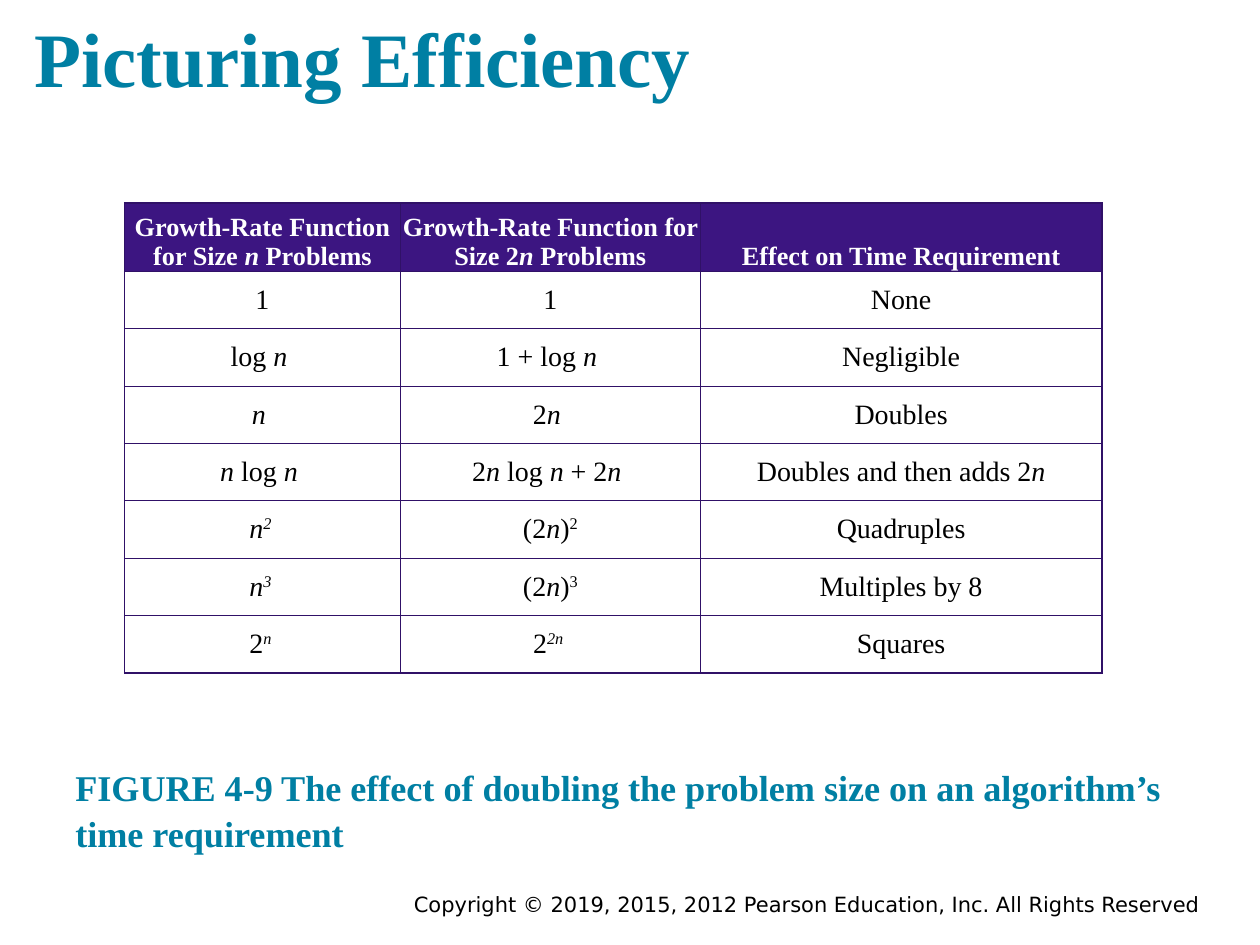
import pptx
import pptx.dml.color
import pptx.enum.text
import pptx.oxml.ns
import pptx.util
from lxml import etree

Pt = pptx.util.Pt
ALIGN = pptx.enum.text.PP_ALIGN
ANCHOR = pptx.enum.text.MSO_ANCHOR

SERIF = "Times New Roman"
TEAL, PURPLE, BORDER = "007FA3", "3C1581", "301167"
BLACK, WHITE = "000000", "FFFFFF"

TITLE = "Picturing Efficiency"
CAPTION = ("FIGURE 4-9 The effect of doubling the problem size on an "
           "algorithm’s time requirement")
COPYRIGHT = "Copyright © 2019, 2015, 2012 Pearson Education, Inc. All Rights Reserved"

PLAIN, ITALIC, SUPER, ITALIC_SUPER = "", "i", "s", "is"
N = ("n ", ITALIC)
N_TIGHT = ("n", ITALIC)
HEADER = [
    [("Growth-Rate Function for Size ", PLAIN), N, ("Problems", PLAIN)],
    [("Growth-Rate Function for Size 2", PLAIN), N, ("Problems", PLAIN)],
    [("Effect on Time Requirement", PLAIN)],
]
BODY = [
    [[("1", PLAIN)], [("1", PLAIN)], [("None", PLAIN)]],
    [[("log ", PLAIN), N], [("1 + log ", PLAIN), N], [("Negligible", PLAIN)]],
    [[N], [("2", PLAIN), N], [("Doubles", PLAIN)]],
    [[N_TIGHT, (" log ", PLAIN), N],
     [("2", PLAIN), N_TIGHT, (" log ", PLAIN), N_TIGHT, (" + 2", PLAIN), N],
     [("Doubles and then adds 2", PLAIN), N_TIGHT]],
    [[N_TIGHT, ("2 ", ITALIC_SUPER)],
     [("(2", PLAIN), N_TIGHT, (")", PLAIN), ("2", SUPER)],
     [("Quadruples", PLAIN)]],
    [[N_TIGHT, ("3 ", ITALIC_SUPER)],
     [("(2", PLAIN), N_TIGHT, (")", PLAIN), ("3", SUPER)],
     [("Multiples by 8", PLAIN)]],
    [[("2", PLAIN), ("n ", ITALIC_SUPER)],
     [("2", PLAIN), ("2n ", ITALIC_SUPER)],
     [("Squares", PLAIN)]],
]
COLUMN_WIDTHS = [157.5, 171.5, 229.5]
HEADER_HEIGHT, ROW_HEIGHT = 39, 32.8
TABLE_LEFT, TABLE_TOP = 71.2, 116


def color(value):
    return pptx.dml.color.RGBColor.from_string(value)


def format_font(font, name, size, value, bold=False):
    font.name, font.size, font.bold = name, Pt(size), bold
    font.color.rgb = color(value)


def write_text(shape, box, text, name, size, value, bold, align, anchor, inset):
    shape.left, shape.top, shape.width, shape.height = [Pt(length) for length in box]
    frame = shape.text_frame
    frame.word_wrap = True
    frame.auto_size = pptx.enum.text.MSO_AUTO_SIZE.NONE
    frame.vertical_anchor = anchor
    frame.margin_left = frame.margin_right = Pt(inset)
    frame.margin_top = frame.margin_bottom = Pt(inset)
    paragraph = frame.paragraphs[0]
    paragraph.text = text
    paragraph.alignment = align
    format_font(paragraph.font, name, size, value, bold)
    return paragraph


def add_border(cell, side, width):
    properties = cell._tc.get_or_add_tcPr()
    line = etree.SubElement(properties, pptx.oxml.ns.qn(f"a:ln{side}"), w=str(Pt(width)))
    fill = etree.SubElement(line, pptx.oxml.ns.qn("a:solidFill"))
    etree.SubElement(fill, pptx.oxml.ns.qn("a:srgbClr"), val=BORDER)


def fill_cell(cell, runs, is_header):
    cell.margin_left = cell.margin_right = cell.margin_top = cell.margin_bottom = 0
    cell.vertical_anchor = ANCHOR.BOTTOM if is_header else ANCHOR.MIDDLE
    if is_header:
        cell.fill.solid()
        cell.fill.fore_color.rgb = color(PURPLE)
    else:
        cell.fill.background()
    paragraph = cell.text_frame.paragraphs[0]
    paragraph.alignment = ALIGN.CENTER
    format_font(paragraph.font, SERIF, 15 if is_header else 16,
                WHITE if is_header else BLACK, is_header)
    for text, style in runs:
        run = paragraph.add_run()
        run.text = text
        if "i" in style:
            run.font.italic = True
        if "s" in style:
            run._r.get_or_add_rPr().set("baseline", "32000")


def add_growth_table(slide):
    rows = [HEADER] + BODY
    heights = [HEADER_HEIGHT] + [ROW_HEIGHT] * len(BODY)
    last_row, last_column = len(rows) - 1, len(COLUMN_WIDTHS) - 1
    table = slide.shapes.add_table(
        len(rows), len(COLUMN_WIDTHS), Pt(TABLE_LEFT), Pt(TABLE_TOP),
        Pt(sum(COLUMN_WIDTHS)), Pt(sum(heights))).table
    table.horz_banding = False
    for column, width in zip(table.columns, COLUMN_WIDTHS):
        column.width = Pt(width)
    for row_index, (row, height) in enumerate(zip(rows, heights)):
        table.rows[row_index].height = Pt(height)
        for column_index, runs in enumerate(row):
            cell = table.cell(row_index, column_index)
            outer_sides = {
                "L": column_index == 0, "R": column_index == last_column,
                "T": row_index == 0, "B": row_index == last_row,
            }
            for side, is_outer in outer_sides.items():
                add_border(cell, side, 1 if is_outer else 0.5)
            fill_cell(cell, runs, row_index == 0)


def main():
    presentation = pptx.Presentation()
    presentation.slide_width, presentation.slide_height = Pt(720), Pt(540)
    slide = presentation.slides.add_slide(presentation.slide_layouts[5])

    write_text(slide.shapes.title, (12.5, 0, 670, 66), TITLE, SERIF, 44, TEAL,
               True, ALIGN.LEFT, ANCHOR.BOTTOM, 7.2)
    add_growth_table(slide)
    caption = write_text(slide.shapes.add_textbox(0, 0, 0, 0), (36, 435, 670, 60.5),
                         CAPTION, SERIF, 20.7, TEAL, True, ALIGN.LEFT,
                         ANCHOR.BOTTOM, 7.2)
    caption.line_spacing = 1.05
    write_text(slide.shapes.add_textbox(0, 0, 0, 0), (126, 506, 563.5, 22.5),
               COPYRIGHT, "DejaVu Sans", 12, BLACK, False, ALIGN.RIGHT,
               ANCHOR.TOP, 3.6)
    presentation.save("out.pptx")


if __name__ == "__main__":
    main()
